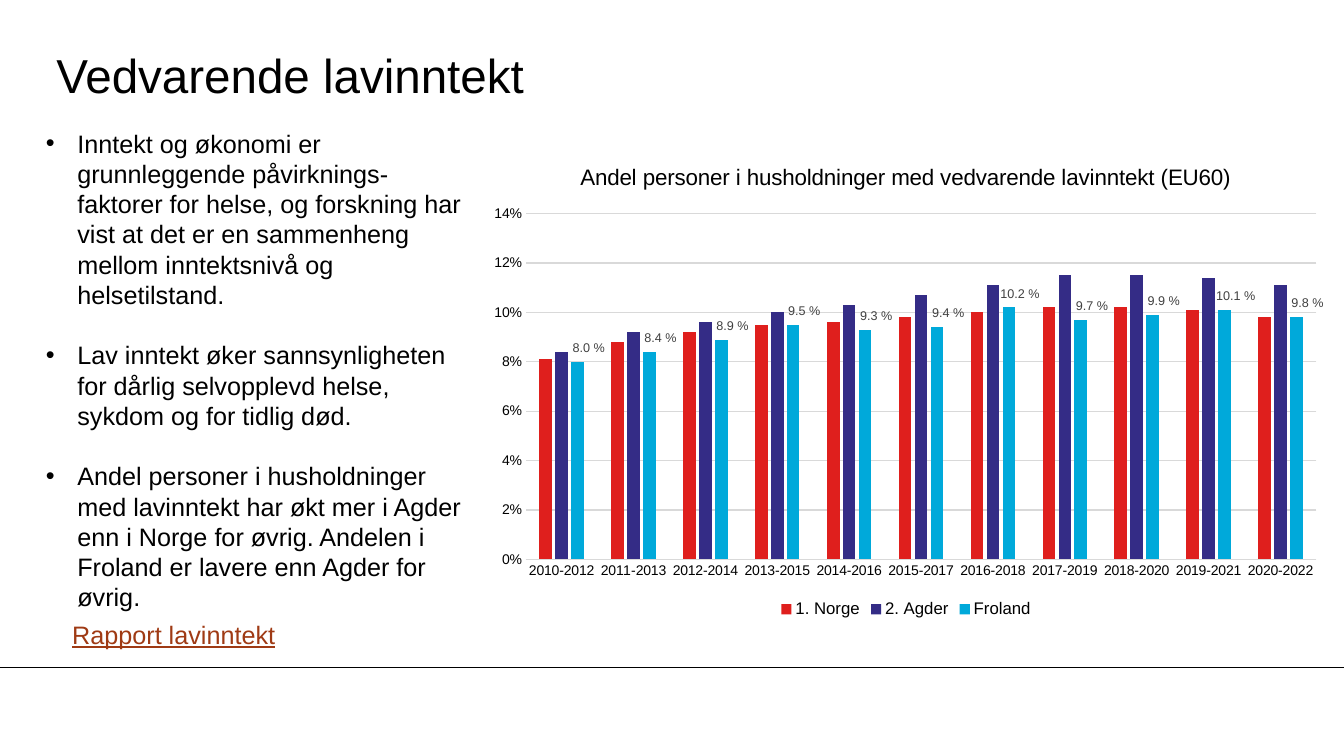
from pptx import Presentation
from pptx.chart.data import CategoryChartData as Data
from pptx.dml.color import RGBColor as RGB
from pptx.enum.chart import XL_CHART_TYPE as Kind, XL_LEGEND_POSITION as Side
from pptx.enum.chart import XL_LABEL_POSITION as Spot, XL_TICK_MARK as Tick
from pptx.enum.text import MSO_ANCHOR as Anchor, MSO_AUTO_SIZE as Fit, PP_ALIGN as Align
from pptx.oxml import parse_xml as parse
from pptx.oxml.ns import nsdecls, qn
from pptx.util import Cm, Pt

FONT = "Arial"
POINTS = [
    "Inntekt og økonomi er grunnleggende påvirknings-faktorer for helse, og "
    "forskning har vist at det er en sammenheng mellom inntektsnivå og helsetilstand.",
    "Lav inntekt øker sannsynligheten for dårlig selvopplevd helse, sykdom og "
    "for tidlig død.",
    "Andel personer i husholdninger med lavinntekt har økt mer i Agder enn i "
    "Norge for øvrig. Andelen i Froland er lavere enn Agder for øvrig.",
]
YEARS = [f"{y}-{y + 2}" for y in range(2010, 2021)]
SERIES = [
    ("1. Norge", "DF1F1D", [8.1, 8.8, 9.2, 9.5, 9.6, 9.8, 10, 10.2, 10.2, 10.1, 9.8]),
    ("2. Agder", "342C86", [8.4, 9.2, 9.6, 10, 10.3, 10.7, 11.1, 11.5, 11.5, 11.4, 11.1]),
    ("Froland", "00A9DA", [8, 8.4, 8.9, 9.5, 9.3, 9.4, 10.2, 9.7, 9.9, 10.1, 9.8]),
]


def tint(code):
    return RGB.from_string(code)


def style(font, size, code="000000"):
    font.name, font.size, font.bold = FONT, Pt(size), False
    font.color.rgb = tint(code)


def rule(line, code):
    line.color.rgb = tint(code)
    line.width = Pt(0.75)


def add_title(slide, text):
    head = slide.shapes.title
    head.left, head.top, head.width, head.height = Cm(1.42), Cm(0.91), Cm(28.19), Cm(1.91)
    frame = head.text_frame
    frame.text = text
    frame.auto_size, frame.vertical_anchor = Fit.NONE, Anchor.MIDDLE
    frame.margin_left = frame.margin_right = frame.margin_top = frame.margin_bottom = 0
    frame.paragraphs[0].alignment = Align.LEFT
    style(frame.paragraphs[0].runs[0].font, 34)


def add_text(slide, box, lines):
    frame = slide.shapes.add_textbox(*map(Cm, box)).text_frame
    frame.word_wrap = True
    frame.text = "\n".join(lines)
    for para in frame.paragraphs:
        style(para.runs[0].font, 18)
    return frame


def add_list(slide, box, lines):
    for i, para in enumerate(add_text(slide, box, lines).paragraphs):
        para.space_before = Pt(21.6 if i else 0)
        props = para._p.get_or_add_pPr()
        props.set("marL", str(Cm(0.79)))
        props.set("indent", str(-Cm(0.79)))
        props.append(parse(f'<a:buFont {nsdecls("a")} typeface="{FONT}"/>'))
        props.append(parse(f'<a:buChar {nsdecls("a")} char="•"/>'))


def add_line(slide, top):
    line = slide.shapes.add_connector(1, 0, Cm(top), Cm(33.87), Cm(top))
    rule(line.line, "000000")
    line._element.spPr.append(parse(f'<a:effectLst {nsdecls("a")}/>'))


def place(part, at, **spots):
    """Give a chart part a manual layout as child number at."""
    for old in part.findall(qn("c:layout")):
        part.remove(old)
    tags = "".join(f'<c:{k} val="{v}"/>' for k, v in spots.items())
    part.insert(at, parse(f'<c:layout {nsdecls("c")}><c:manualLayout>{tags}'
                          '</c:manualLayout></c:layout>'))


def add_labels(bars):
    labels = bars.data_labels
    labels.show_value = True
    labels.number_format, labels.number_format_is_linked = "0.0\\ %", False
    labels.position = Spot.OUTSIDE_END
    style(labels.font, 9, "404040")
    # Nudge each label right, clear of the neighbouring bar
    for i in range(len(YEARS)):
        label = bars.points[i].data_label
        label.position = Spot.OUTSIDE_END
        style(label.font, 9, "404040")
        node = labels._element.findall(qn("c:dLbl"))[i]
        node.insert(1, parse(f'<c:numFmt {nsdecls("c")} formatCode="0.0\\ %" '
                             'sourceLinked="0"/>'))
        place(node, 1, x=0.013, y=-0.005)


def add_chart(slide, box, title):
    data = Data(number_format="0.0%")
    data.categories = YEARS
    for name, _, vals in SERIES:
        data.add_series(name, [round(v / 100, 3) for v in vals])
    chart = slide.shapes.add_chart(Kind.COLUMN_CLUSTERED, *map(Cm, box), data).chart
    style(chart.font, 10)

    # Title and legend
    chart.has_title = True
    frame = chart.chart_title.text_frame
    frame.text = title
    style(frame.paragraphs[0].runs[0].font, 16)
    place(chart.chart_title._element, 1, xMode="edge", yMode="edge", x=0.115, y=0.033)
    chart.has_legend = True
    chart.legend.position, chart.legend.include_in_layout = Side.BOTTOM, False
    style(chart.legend.font, 12)

    # Axes
    cats, vals = chart.category_axis, chart.value_axis
    for axis in (cats, vals):
        axis.major_tick_mark = axis.minor_tick_mark = Tick.NONE
        style(axis.tick_labels.font, 10)
    rule(cats.format.line, "D9D9D9")
    vals.format.line.fill.background()
    rule(vals.major_gridlines.format.line, "D9D9D9")
    vals.minimum_scale, vals.maximum_scale, vals.major_unit = 0, 0.14, 0.02
    vals.tick_labels.number_format = "0%"
    vals.tick_labels.number_format_is_linked = False

    # Columns
    plot = chart.plots[0]
    plot.gap_width, plot.overlap, plot.vary_by_categories = 219, -27, False
    for bars, (_, code, _) in zip(plot.series, SERIES):
        bars.format.fill.solid()
        bars.format.fill.fore_color.rgb = tint(code)
    add_labels(plot.series[2])
    area = chart._chartSpace.xpath("c:chart/c:plotArea")[0]
    place(area, 0, layoutTarget="inner", xMode="edge", yMode="edge",
          x=0.056, y=0.147, w=0.923, h=0.722)


def main():
    deck = Presentation()
    deck.slide_width, deck.slide_height = Cm(33.87), Cm(19.05)
    slide = deck.slides.add_slide(deck.slide_layouts[5])
    add_line(slide, 16.81)
    add_title(slide, "Vedvarende lavinntekt")
    add_list(slide, (0.91, 3.1, 11.13, 12.57), POINTS)
    link = add_text(slide, (1.57, 15.47, 6.73, 1.02), ["Rapport lavinntekt"])
    font = link.paragraphs[0].runs[0].font
    style(font, 18, "9F3A14")
    font.underline = True
    add_chart(slide, (12.04, 3.61, 21.59, 12.07),
              "Andel personer i husholdninger med vedvarende lavinntekt (EU60)")
    deck.save("out.pptx")


if __name__ == "__main__":
    main()
